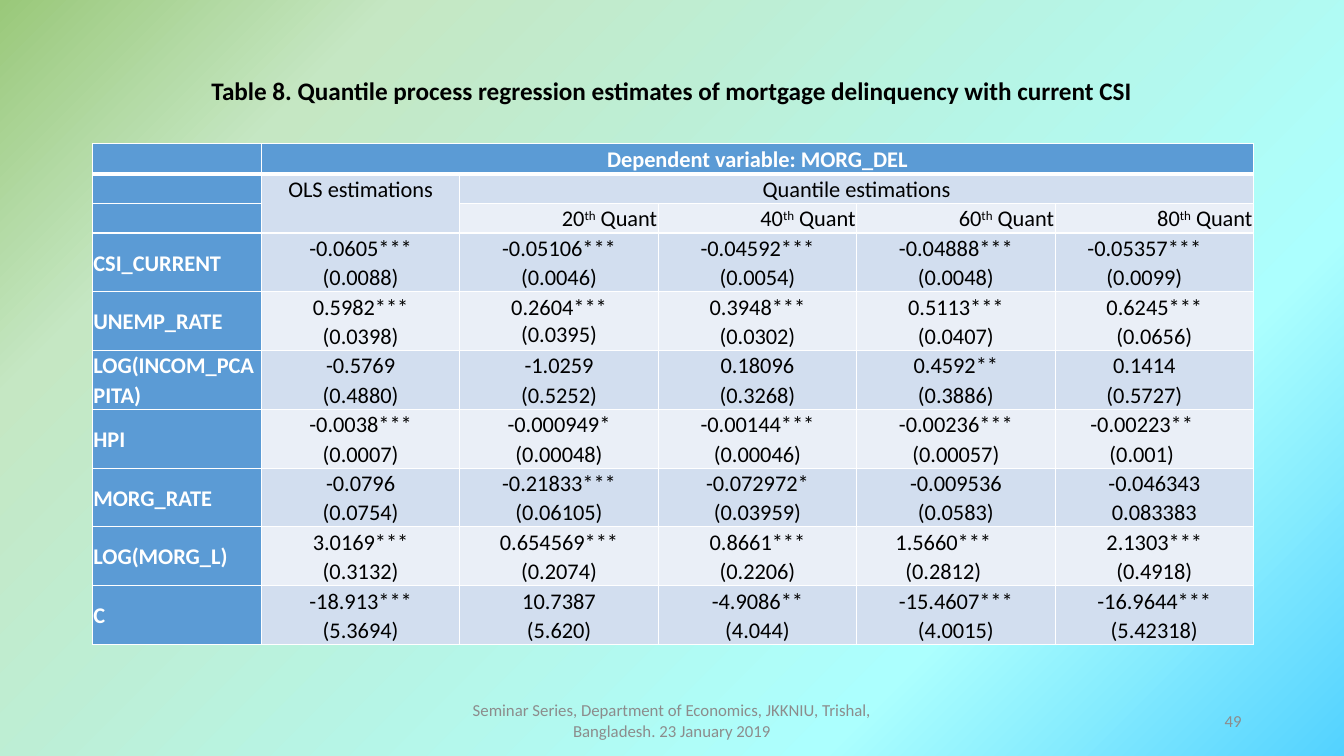
"""Build the slide with the quantile regression table of mortgage delinquency."""
from dataclasses import dataclass

from lxml.etree import SubElement
from pptx import Presentation
from pptx.dml.color import RGBColor
from pptx.enum.text import MSO_ANCHOR as Anchor, PP_ALIGN as Align
from pptx.oxml import parse_xml
from pptx.oxml.ns import qn
from pptx.util import Emu, Pt

PX = 9525
FONT = "Calibri"
COLORS = {"header": "5B9BD5", "band": "D2DEEF", "light": "EAEFF7",
          "white": "FFFFFF", "black": "000000", "gray": "8C8C8C"}
BACKGROUND_STOPS = {0: "53D2FF", 25: "ACFFFE", 81: "C5E7C3", 100: "9AC87A"}
DRAWING_NS = "http://schemas.openxmlformats.org/drawingml/2006/main"
LINE_SPACING = 1.07
LABEL_WIDTH, ESTIMATE_WIDTH = 161, 189
HEADER_HEIGHTS, ESTIMATE_HEIGHT = (29, 28, 28), 56


@dataclass(frozen=True)
class Estimate:
    value: str
    error: str
    right_inset: int = 1
    spacing: float = LINE_SPACING


@dataclass(frozen=True)
class Variable:
    name: str
    estimates: tuple[Estimate, ...]


@dataclass(frozen=True)
class Note:
    text: str
    left: int
    width: int
    align: Align


VARIABLES = (
    Variable("CSI_CURRENT", (
        Estimate("-0.0605***", "(0.0088)"), Estimate("-0.05106***", "(0.0046)"),
        Estimate("-0.04592***", "(0.0054)"), Estimate("-0.04888***", "(0.0048)"),
        Estimate("-0.05357***", "(0.0099)", 20))),
    Variable("UNEMP_RATE", (
        Estimate("0.5982***", "(0.0398)"), Estimate("0.2604***", "(0.0395)", spacing=1.0),
        Estimate("0.3948***", "(0.0302)"), Estimate("0.5113***", "(0.0407)"),
        Estimate("0.6245***", "(0.0656)"))),
    Variable("LOG(INCOM_PCAPITA)", (
        Estimate("-0.5769", "(0.4880)"), Estimate("-1.0259", "(0.5252)"),
        Estimate("0.18096", "(0.3268)"), Estimate("0.4592**", "(0.3886)"),
        Estimate("0.1414", "(0.5727)", 20))),
    Variable("HPI", (
        Estimate("-0.0038***", "(0.0007)"), Estimate("-0.000949*", "(0.00048)"),
        Estimate("-0.00144***", "(0.00046)"), Estimate("-0.00236***", "(0.00057)"),
        Estimate("-0.00223**", "(0.001)", 25))),
    Variable("MORG_RATE", (
        Estimate("-0.0796", "(0.0754)"), Estimate("-0.21833***", "(0.06105)"),
        Estimate("-0.072972*", "(0.03959)"), Estimate("-0.009536", "(0.0583)"),
        Estimate("-0.046343", "0.083383"))),
    Variable("LOG(MORG_L)", (
        Estimate("3.0169***", "(0.3132)"), Estimate("0.654569***", "(0.2074)"),
        Estimate("0.8661***", "(0.2206)"), Estimate("1.5660***", "(0.2812)", 25),
        Estimate("2.1303***", "(0.4918)"))),
    Variable("C", (
        Estimate("-18.913***", "(5.3694)"), Estimate("10.7387", "(5.620)"),
        Estimate("-4.9086**", "(4.044)"), Estimate("-15.4607***", "(4.0015)"),
        Estimate("-16.9644***", "(5.42318)"))),
)
QUANTILES = (20, 40, 60, 80)
NOTES = (
    Note("Seminar Series, Department of Economics, JKKNIU, Trishal, "
         "Bangladesh. 23 January 2019", 424, 432, Align.CENTER),
    Note("49", 904, 288, Align.RIGHT),
)


def px(length: int) -> Emu:
    return Emu(length * PX)


def style_text(text_frame, size: int, color: str, bold: bool, align: Align,
               spacing: float = LINE_SPACING) -> None:
    for paragraph in text_frame.paragraphs:
        paragraph.alignment = align
        paragraph.line_spacing = spacing
        for run in paragraph.runs:
            font = run.font
            font.name, font.size, font.bold = FONT, Pt(size), bold
            font.color.rgb = RGBColor.from_string(COLORS[color])


def paint_background(slide) -> None:
    stops = "".join(f'<a:gs pos="{position * 1000}"><a:srgbClr val="{color}"/></a:gs>'
                    for position, color in BACKGROUND_STOPS.items())
    fill = slide.background.fill
    fill.gradient()
    properties = slide.background._cSld.find(qn("p:bg")).find(qn("p:bgPr"))
    gradient = parse_xml(
        f'<a:gradFill xmlns:a="{DRAWING_NS}" rotWithShape="1"><a:gsLst>{stops}</a:gsLst>'
        '<a:path path="circle"><a:fillToRect l="100000" t="100000"/></a:path></a:gradFill>')
    properties.replace(properties.find(qn("a:gradFill")), gradient)


def add_borders(cell, bottom: int) -> None:
    properties = cell._tc.get_or_add_tcPr()
    widths = {"lnL": 1, "lnR": 1, "lnT": 1, "lnB": bottom}
    for index, (side, width) in enumerate(widths.items()):
        properties.insert(index, parse_xml(
            f'<a:{side} xmlns:a="{DRAWING_NS}" w="{width * 12700}"><a:solidFill>'
            f'<a:srgbClr val="{COLORS["white"]}"/></a:solidFill></a:{side}>'))


def format_cell(cell, row: int, column: int) -> None:
    is_header = row == 0 or column == 0
    is_band = row == 1 or row % 2 == 1 or (row == 2 and column == 1)
    cell.fill.solid()
    cell.fill.fore_color.rgb = RGBColor.from_string(
        COLORS["header" if is_header else "band" if is_band else "light"])
    cell.margin_left = cell.margin_right = px(1)
    cell.margin_top = cell.margin_bottom = 0
    cell.vertical_anchor = Anchor.TOP if row < len(HEADER_HEIGHTS) else Anchor.MIDDLE
    add_borders(cell, 3 if row == 0 else 1)
    if not cell.text_frame.text:
        SubElement(cell.text_frame.paragraphs[0]._p, qn("a:endParaRPr"), sz="1600")


def fill_headers(table) -> None:
    table.cell(0, 1).merge(table.cell(0, 5))
    table.cell(1, 1).merge(table.cell(2, 1))
    table.cell(1, 2).merge(table.cell(1, 5))
    headings = ((0, 1, "Dependent variable: MORG_DEL"), (1, 1, "OLS estimations"),
                (1, 2, "Quantile estimations"))
    for row, column, text in headings:
        text_frame = table.cell(row, column).text_frame
        text_frame.text = text
        style_text(text_frame, 16, "white" if row == 0 else "black", row == 0, Align.CENTER)
    for column, quantile in enumerate(QUANTILES, start=2):
        text_frame = table.cell(2, column).text_frame
        paragraph = text_frame.paragraphs[0]
        for text in (str(quantile), "th", " Quant"):
            paragraph.add_run().text = text
        style_text(text_frame, 16, "black", False, Align.RIGHT)
        paragraph.runs[1].font._element.set("baseline", "30000")


def add_estimates_table(slide) -> None:
    heights = HEADER_HEIGHTS + (ESTIMATE_HEIGHT,) * len(VARIABLES)
    widths = (LABEL_WIDTH,) + (ESTIMATE_WIDTH,) * 5
    table = slide.shapes.add_table(len(heights), len(widths), px(88), px(137),
                                   px(sum(widths)), px(sum(heights))).table
    for table_row, height in zip(table.rows, heights):
        table_row.height = px(height)
    for table_column, width in zip(table.columns, widths):
        table_column.width = px(width)
    fill_headers(table)
    for row, variable in enumerate(VARIABLES, start=len(HEADER_HEIGHTS)):
        label = table.cell(row, 0).text_frame
        label.text = variable.name
        style_text(label, 16, "white", True, Align.LEFT)
        for column, estimate in enumerate(variable.estimates, start=1):
            text_frame = table.cell(row, column).text_frame
            text_frame.text = f"{estimate.value}\n{estimate.error}"
            style_text(text_frame, 16, "black", False, Align.CENTER, estimate.spacing)
    for row in range(len(heights)):
        for column in range(len(widths)):
            format_cell(table.cell(row, column), row, column)
    for row, variable in enumerate(VARIABLES, start=len(HEADER_HEIGHTS)):
        for column, estimate in enumerate(variable.estimates, start=1):
            table.cell(row, column).margin_right = px(estimate.right_inset)


def add_title(slide) -> None:
    title = slide.shapes.title
    title.left, title.top, title.width, title.height = px(53), px(65), px(1174), px(41)
    text_frame = title.text_frame
    text_frame.text = ("Table 8. Quantile process regression estimates of mortgage "
                       "delinquency with current CSI")
    text_frame.vertical_anchor = Anchor.TOP
    style_text(text_frame, 18, "black", True, Align.CENTER)
    text_frame.paragraphs[0].space_after = Pt(8)


def add_note(slide, note: Note) -> None:
    text_frame = slide.shapes.add_textbox(
        px(note.left), px(667), px(note.width), px(38)).text_frame
    text_frame.word_wrap = True
    text_frame.vertical_anchor = Anchor.MIDDLE
    text_frame.text = note.text
    style_text(text_frame, 12, "gray", False, note.align, 1.0)


def main() -> None:
    presentation = Presentation()
    presentation.slide_width, presentation.slide_height = px(1280), px(720)
    slide = presentation.slides.add_slide(presentation.slide_layouts[5])
    paint_background(slide)
    add_title(slide)
    add_estimates_table(slide)
    for note in NOTES:
        add_note(slide, note)
    presentation.save("out.pptx")


if __name__ == "__main__":
    main()
